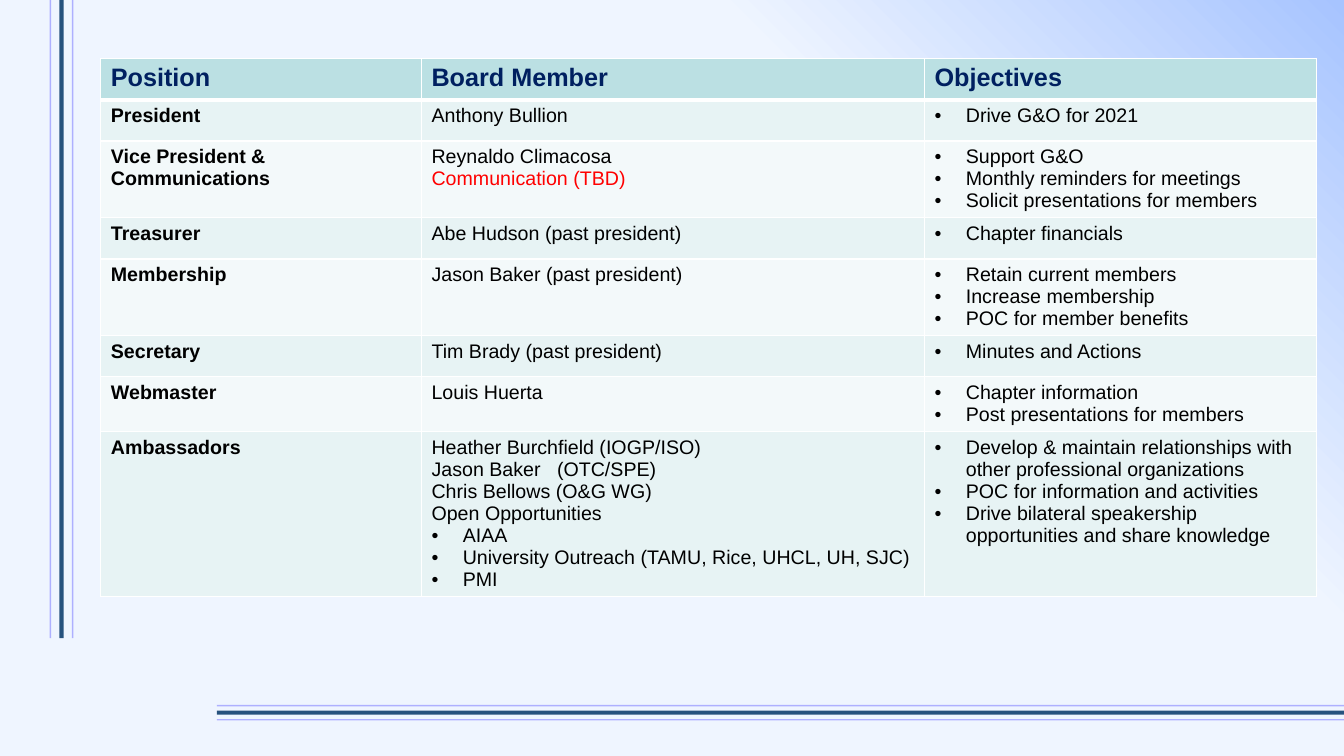
from lxml import etree
from pptx import Presentation
from pptx.dml.color import RGBColor
from pptx.enum.shapes import MSO_CONNECTOR
from pptx.oxml.ns import qn
from pptx.util import Inches, Pt

# Content: position, members, objectives; "• " marks a bullet
HEADS = ("Position", "Board Member", "Objectives")
ROWS = [
    ("President", ["Anthony Bullion"], ["• Drive G&O for 2021"]),
    ("Vice President & Communications",
     ["Reynaldo Climacosa", "Communication (TBD)"],
     ["• Support G&O", "• Monthly reminders for meetings",
      "• Solicit presentations for members"]),
    ("Treasurer", ["Abe Hudson (past president)"], ["• Chapter financials"]),
    ("Membership", ["Jason Baker (past president)"],
     ["• Retain current members", "• Increase membership",
      "• POC for member benefits"]),
    ("Secretary", ["Tim Brady (past president)"], ["• Minutes and Actions"]),
    ("Webmaster", ["Louis Huerta"],
     ["• Chapter information", "• Post presentations for members"]),
    ("Ambassadors",
     ["Heather Burchfield (IOGP/ISO)", "Jason Baker   (OTC/SPE)",
      "Chris Bellows (O&G WG)", "Open Opportunities", "• AIAA",
      "• University Outreach (TAMU, Rice, UHCL, UH, SJC)", "• PMI"],
     ["• Develop & maintain relationships with other professional organizations",
      "• POC for information and activities",
      "• Drive bilateral speakership opportunities and share knowledge"]),
]
OPEN = "Communication (TBD)"

# Colours and formats
PALE, SKY = RGBColor(0xEF, 0xF5, 0xFF), RGBColor(0xA7, 0xC4, 0xFF)
LILAC, DEEP = RGBColor(0x99, 0x99, 0xFF), RGBColor(0x00, 0x33, 0x66)
TEAL = RGBColor(0xBB, 0xE0, 0xE3)
BANDS = (RGBColor(0xE7, 0xF3, 0xF4), RGBColor(0xF3, 0xF9, 0xFA))
NAVY, BLACK = RGBColor(0x00, 0x20, 0x60), RGBColor(0, 0, 0)
RED, WHITE = RGBColor(0xFF, 0, 0), RGBColor(0xFF, 0xFF, 0xFF)
HEAD = dict(name="Arial", size=Pt(18), bold=True)
BODY = dict(name="Arial", size=Pt(14))
THIN, BOLD = (LILAC, 1, 75), (DEEP, 3, 84)  # colour, points, opacity

# Layout in inches
WIDE, HIGH = 13.33, 7.5
LEFT, TOP = 1, 0.58
COLS = (3.18, 4.99, 3.89)
LEAST, LINE, PAD, INDENT = 0.41, 0.22, 0.1, 0.31
RAILS = [(0.5, THIN), (0.72, THIN), (0.61, BOLD)]
BASES = [(7.14, THIN), (7.07, BOLD), (7, THIN)]


def add_rule(slide, ends, style):
    color, width, solid = style
    rule = slide.shapes.add_connector(
        MSO_CONNECTOR.STRAIGHT, *[Inches(v) for v in ends])
    rule.line.color.rgb, rule.line.width = color, Pt(width)
    tint = rule.line._ln.find(".//" + qn("a:srgbClr"))
    etree.SubElement(tint, qn("a:alpha"), val=str(solid * 1000))
    etree.SubElement(rule._element.spPr, qn("a:effectLst"))


def add_edges(cell, top, bottom):
    props = cell._tc.get_or_add_tcPr()
    edges = (("L", 1), ("R", 1), ("T", top), ("B", bottom))
    for spot, (side, width) in enumerate(edges):
        edge = etree.Element(qn("a:ln" + side), w=str(Pt(width)))
        fill = etree.SubElement(edge, qn("a:solidFill"))
        etree.SubElement(fill, qn("a:srgbClr"), val=str(WHITE))
        props.insert(spot, edge)


def fill_cell(cell, lines, style, color, fill):
    cell.fill.solid()
    cell.fill.fore_color.rgb = fill
    frame = cell.text_frame
    for num, line in enumerate(lines):
        para = frame.add_paragraph() if num else frame.paragraphs[0]
        if line.startswith("• "):
            props = para._p.get_or_add_pPr()
            props.set("marL", str(Inches(INDENT)))
            props.set("indent", str(-Inches(INDENT)))
            etree.SubElement(props, qn("a:buFont"), typeface="Arial")
            etree.SubElement(props, qn("a:buChar"), char="•")
        run = para.add_run()
        run.text = line.removeprefix("• ")
        for key, val in style.items():
            setattr(run.font, key, val)
        run.font.color.rgb = RED if line == OPEN else color


def add_board(slide):
    grid = [[[head] for head in HEADS]]
    grid += [[[post], who, aims] for post, who, aims in ROWS]
    highs = [max(LEAST, PAD + LINE * max(map(len, row))) for row in grid]
    table = slide.shapes.add_table(
        len(grid), len(COLS), Inches(LEFT), Inches(TOP),
        Inches(sum(COLS)), Inches(sum(highs))).table
    table.horz_banding = False
    for col, width in zip(table.columns, COLS):
        col.width = Inches(width)
    for r, row in enumerate(grid):
        table.rows[r].height = Inches(highs[r])
        for c, lines in enumerate(row):
            cell = table.cell(r, c)
            if r == 0:
                fill_cell(cell, lines, HEAD, NAVY, TEAL)
            else:
                style = BODY | dict(bold=c == 0)
                fill_cell(cell, lines, style, BLACK, BANDS[(r - 1) % 2])
            add_edges(cell, 3 if r == 1 else 1, 3 if r == 0 else 1)


def main():
    deck = Presentation()
    deck.slide_width, deck.slide_height = Inches(WIDE), Inches(HIGH)
    slide = deck.slides.add_slide(deck.slide_layouts[6])

    # Background
    back = slide.background.fill
    back.gradient()
    back.gradient_angle = 45
    for stop, place, color in zip(back.gradient_stops, (0.7, 1), (PALE, SKY)):
        stop.position, stop.color.rgb = place, color

    # Side and bottom rules
    for x, style in RAILS:
        add_rule(slide, (x, 0, x, 6.33), style)
    for y, style in BASES:
        add_rule(slide, (WIDE, y, 2.15, y), style)

    add_board(slide)
    deck.save("out.pptx")


if __name__ == "__main__":
    main()
